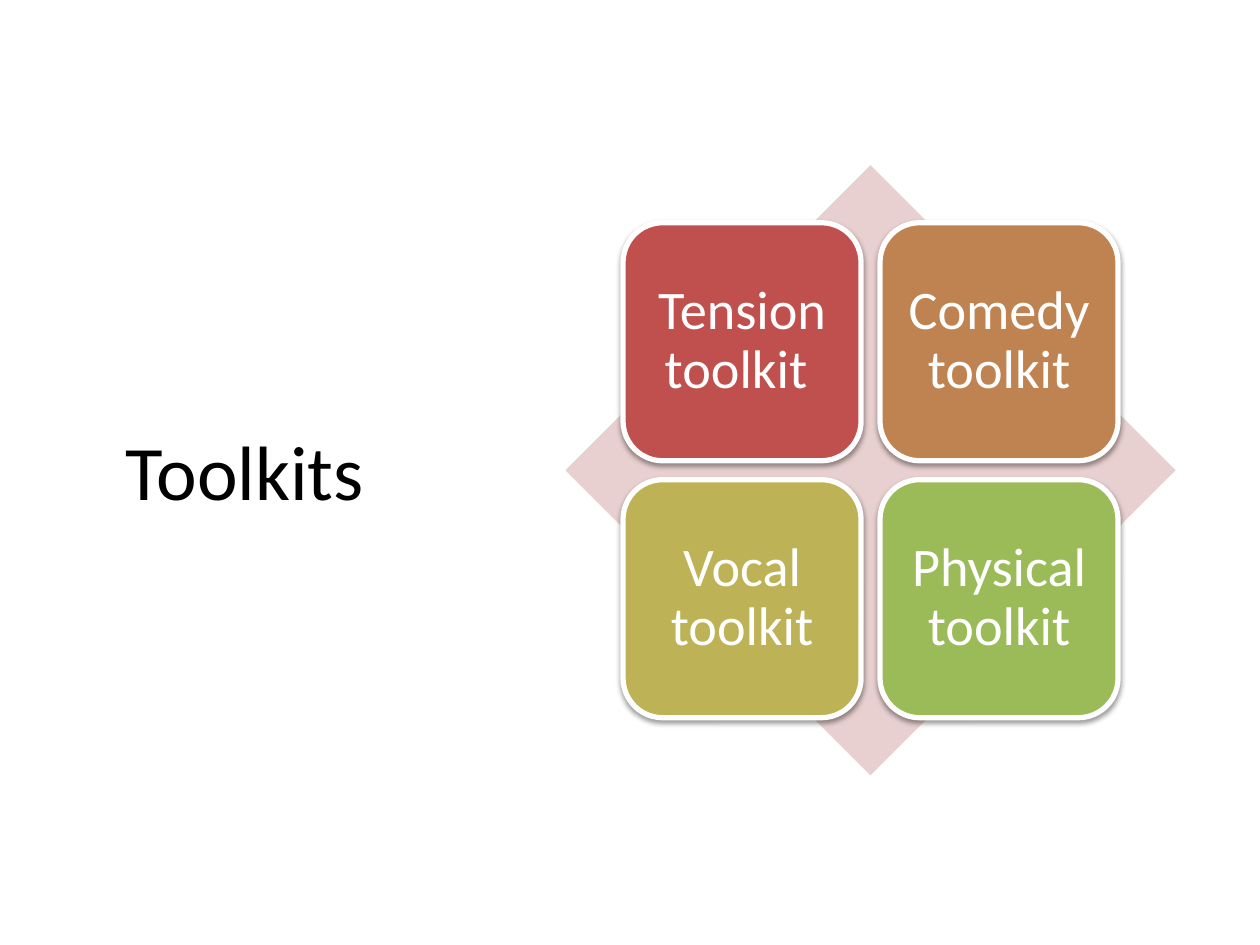
from lxml import etree
from pptx import Presentation
from pptx.dml.color import RGBColor
from pptx.enum import shapes, text
from pptx.oxml import ns
from pptx.util import Cm, Pt

# Content
TITLE = "Toolkits "
TILES = [
    ("Tension toolkit ", "red"),
    ("Comedy toolkit", "brown"),
    ("Vocal toolkit", "olive"),
    ("Physical toolkit", "green"),
]
COLORS = {
    "red": "C0504D", "brown": "BE8351", "olive": "BDB255", "green": "9BBB59",
    "pale": "E8D0D0", "white": "FFFFFF", "black": "000000",
}
FONT = "Calibri"

# Layout in centimetres
MID_X, MID_Y = 17.55, 9.48
DIAMOND, TILE, GAP = 12.3, 4.8, 0.38
INSET = 0.33


def color(name):
    return RGBColor.from_string(COLORS[name])


def write(shape, words, size, tint):
    frame = shape.text_frame
    frame.text = words
    frame.word_wrap = True
    frame.vertical_anchor = text.MSO_ANCHOR.MIDDLE
    para = frame.paragraphs[0]
    para.alignment = text.PP_ALIGN.CENTER
    font = para.runs[0].font
    font.name, font.size = FONT, Pt(size)
    font.color.rgb = color(tint)
    return frame


def block(kind, left, top, side, fill):
    shape = slide.shapes.add_shape(kind, Cm(left), Cm(top), Cm(side), Cm(side))
    shape.shadow.inherit = False
    shape.fill.solid()
    shape.fill.fore_color.rgb = color(fill)
    shape.line.fill.background()
    return shape


def shade(shape):
    """Drop a soft shadow straight down."""
    effects = shape._element.spPr.find(ns.qn("a:effectLst"))
    outer = etree.SubElement(
        effects, ns.qn("a:outerShdw"), blurRad=str(Pt(3.1)),
        dist=str(Pt(1.6)), dir="5400000", rotWithShape="0")
    tint = etree.SubElement(outer, ns.qn("a:srgbClr"), val=COLORS["black"])
    etree.SubElement(tint, ns.qn("a:alpha"), val="38000")


deck = Presentation()
deck.slide_width, deck.slide_height = Cm(25.4), Cm(19.05)
slide = deck.slides.add_slide(deck.slide_layouts[6])

# Title
title = slide.shapes.add_textbox(Cm(1.19), Cm(1.55), Cm(7.85), Cm(15.85))
write(title, TITLE, 44, "black")

# Diamond behind the tiles
block(shapes.MSO_SHAPE.DIAMOND, MID_X - DIAMOND / 2, MID_Y - DIAMOND / 2,
      DIAMOND, "pale")

# Two by two tiles around the centre
start = TILE + GAP / 2
for i, (words, fill) in enumerate(TILES):
    row, col = divmod(i, 2)
    tile = block(shapes.MSO_SHAPE.ROUNDED_RECTANGLE,
                 MID_X - start + col * (TILE + GAP),
                 MID_Y - start + row * (TILE + GAP), TILE, fill)
    tile.line.color.rgb = color("white")
    tile.line.width = Pt(3)
    shade(tile)
    frame = write(tile, words, 31, "white")
    frame.margin_left = frame.margin_right = Cm(INSET)
    frame.margin_top = frame.margin_bottom = Cm(INSET)
    frame.paragraphs[0].line_spacing = 0.9

deck.save("out.pptx")
